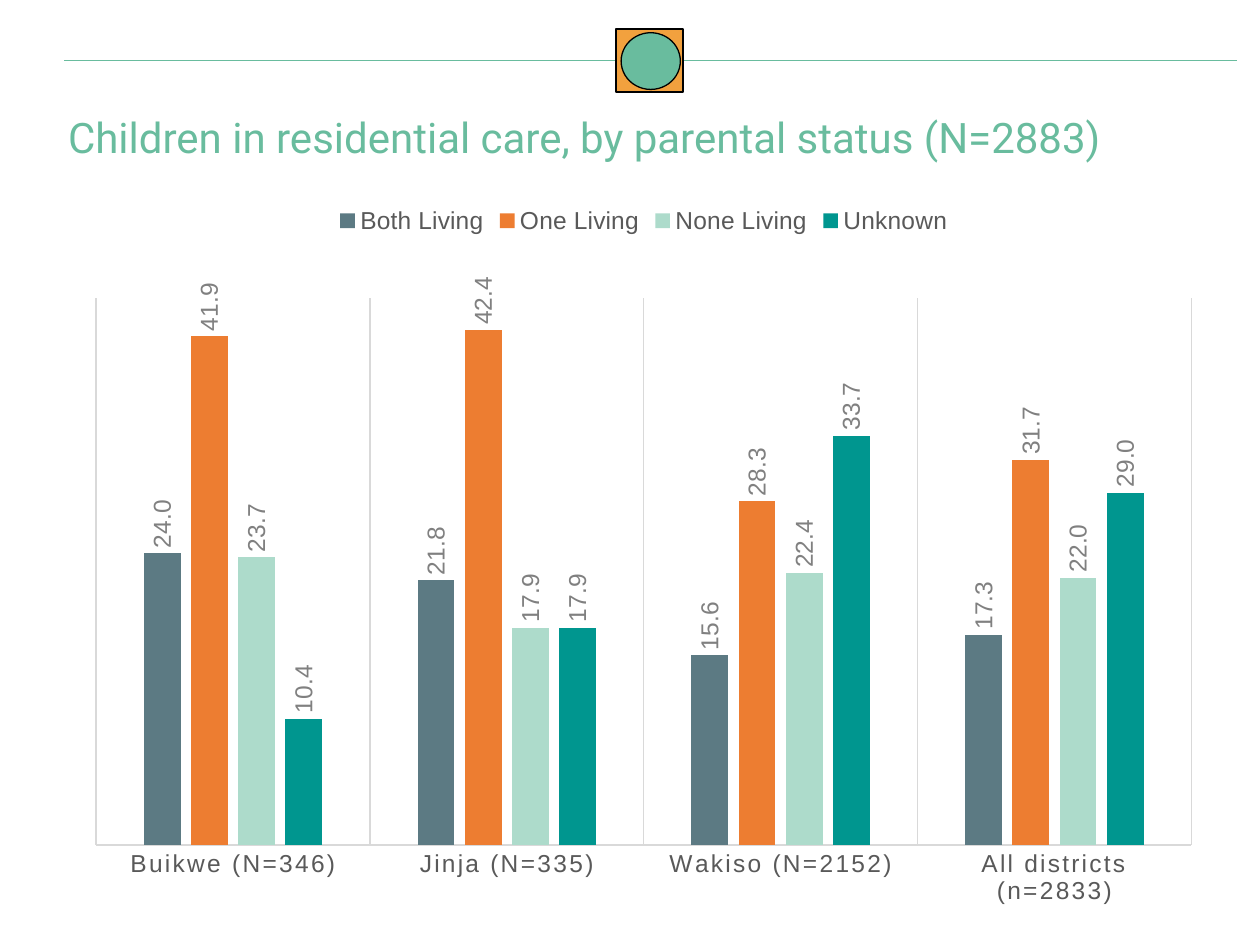
from lxml import etree
from pptx import Presentation
from pptx import util as u
from pptx.chart.data import CategoryChartData
from pptx.dml.color import RGBColor
from pptx.enum import chart as ch, shapes, text
from pptx.oxml import parse_xml
from pptx.oxml.ns import nsdecls, qn

COLORS = {
    "green": "69BC9E", "amber": "F2A13E", "outline": "000000",
    "label": "808080", "axis text": "595959", "grid": "D9D9D9",
    "Both Living": "5C7A83", "One Living": "ED7D31",
    "None Living": "ADDBCB", "Unknown": "00968F",
}
DISTRICTS = ["Buikwe (N=346)", "Jinja (N=335)", "Wakiso (N=2152)", "All districts (n=2833)"]
PARENTAL_STATUS = {
    "Both Living": (24, 21.8, 15.6, 17.3),
    "One Living": (41.9, 42.4, 28.3, 31.7),
    "None Living": (23.7, 17.9, 22.4, 22),
    "Unknown": (10.4, 17.9, 33.7, 29),
}


def color(name):
    return RGBColor.from_string(COLORS[name])


def style_font(font, size, name, face="Arial"):
    font.size, font.name, font.bold = u.Pt(size), face, False
    font.color.rgb = color(name)


deck = Presentation()
deck.slide_width, deck.slide_height = u.Inches(10), u.Inches(7.5)
slide = deck.slides.add_slide(deck.slide_layouts[5])

# Header rule
rule_y = u.Inches(0.48)
rule = slide.shapes.add_connector(
    shapes.MSO_CONNECTOR.STRAIGHT, u.Inches(0.51), rule_y, u.Inches(9.82), rule_y)
rule.line.color.rgb = color("green")
rule.line.width = u.Pt(0.75)
etree.SubElement(rule._element.spPr, qn("a:effectLst"))

# Square and circle centred on the rule
for preset, left, top, width, height, fill, weight in (
    (shapes.MSO_SHAPE.RECTANGLE, 4.89, 0.23, 0.53, 0.5, "amber", 1),
    (shapes.MSO_SHAPE.OVAL, 4.93, 0.26, 0.47, 0.45, "green", 0.75),
):
    emblem = slide.shapes.add_shape(
        preset, u.Inches(left), u.Inches(top), u.Inches(width), u.Inches(height))
    emblem.shadow.inherit = False
    emblem.fill.solid()
    emblem.fill.fore_color.rgb = color(fill)
    emblem.line.color.rgb = color("outline")
    emblem.line.width = u.Pt(weight)

# Title
title = slide.shapes.title
title.left, title.top = u.Inches(0.44), u.Inches(0.88)
title.width, title.height = u.Inches(9.16), u.Inches(0.92)
title.text_frame.vertical_anchor = text.MSO_ANCHOR.TOP
title.text_frame.auto_size = text.MSO_AUTO_SIZE.NONE
heading = title.text_frame.paragraphs[0]
heading.alignment = text.PP_ALIGN.LEFT
heading.line_spacing = 0.9
heading_run = heading.add_run()
heading_run.text = "Children in residential care, by parental status (N=2883)"
style_font(heading_run.font, 24, "green", "Roboto")

# Chart of parental status by district
status_data = CategoryChartData(number_format="0.0")
status_data.categories = DISTRICTS
for status, shares in PARENTAL_STATUS.items():
    status_data.add_series(status, shares)
chart = slide.shapes.add_chart(
    ch.XL_CHART_TYPE.COLUMN_CLUSTERED, u.Inches(0.61), u.Inches(1.53),
    u.Inches(9), u.Inches(5.83), status_data).chart
style_font(chart.font, 14, "outline")
chart.has_title = False

# Legend
chart.has_legend = True
chart.legend.position = ch.XL_LEGEND_POSITION.TOP
chart.legend.include_in_layout = False
style_font(chart.legend.font, 14, "axis text")

# Axes
districts = chart.category_axis
districts.major_tick_mark = ch.XL_TICK_MARK.NONE
districts.has_major_gridlines = True
for line in (districts.format.line, districts.major_gridlines.format.line):
    line.color.rgb = color("grid")
    line.width = u.Pt(0.75)
style_font(districts.tick_labels.font, 14, "axis text")
for run_style in districts._element.iter(qn("a:defRPr")):
    run_style.set("spc", "120")
percent = chart.value_axis
percent.minimum_scale, percent.maximum_scale = 0, 45
percent.has_major_gridlines = False
percent.visible = False

# Columns with upright value labels
columns = chart.plots[0]
columns.gap_width, columns.overlap = 259, -28
columns.vary_by_categories = False
for series in columns.series:
    series.format.fill.solid()
    series.format.fill.fore_color.rgb = color(series.name)
    labels = series.data_labels
    labels.show_value = True
    labels.position = ch.XL_LABEL_POSITION.OUTSIDE_END
    labels.number_format, labels.number_format_is_linked = "0.0", False
    style_font(labels.font, 14, "label")
    for body in labels._element.iter(qn("a:bodyPr")):
        body.set("rot", "-5400000")
        body.set("vert", "horz")

# Plot area as shares of the chart
plot_area = chart._chartSpace.find(".//" + qn("c:plotArea"))
for automatic in plot_area.findall(qn("c:layout")):
    plot_area.remove(automatic)
shares = {"x": 0.017, "y": 0.144, "w": 0.966, "h": 0.744}
plot_area.insert(0, parse_xml(
    f'<c:layout {nsdecls("c")}><c:manualLayout><c:layoutTarget val="inner"/>'
    '<c:xMode val="edge"/><c:yMode val="edge"/>'
    + "".join(f'<c:{side} val="{share}"/>' for side, share in shares.items())
    + "</c:manualLayout></c:layout>"))

deck.save("out.pptx")
